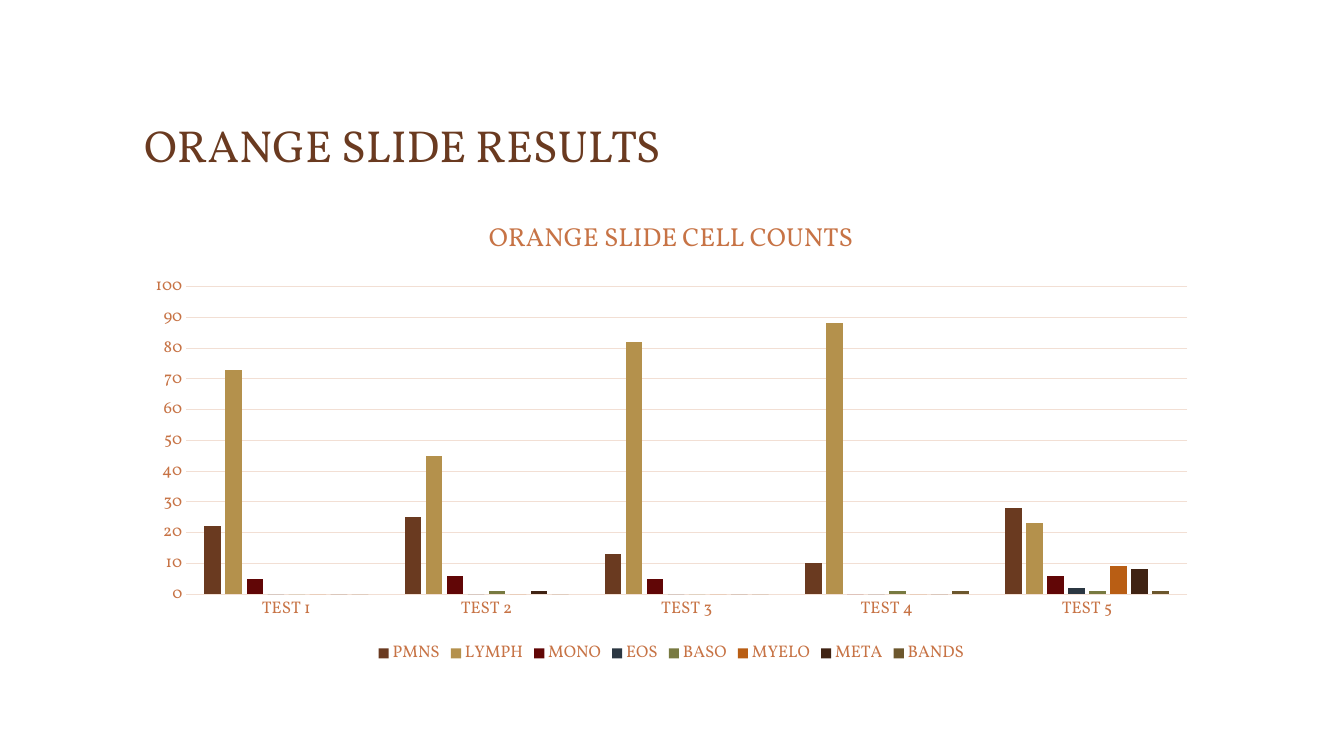
from pptx import Presentation, util as u
from pptx.chart import data as cd
from pptx.dml import color
from pptx.enum import chart as ch, text

FACE = "Vollkorn"
BROWN, RUST, PALE = "6A3A20", "C77345", "F2DFD4"
TESTS = [f"TEST {n}" for n in range(1, 6)]
CELLS = {
    "PMNS": ("6A3A20", (22, 25, 13, 10, 28)),
    "LYMPH": ("B4914C", (73, 45, 82, 88, 23)),
    "MONO": ("610606", (5, 6, 5, 0, 6)),
    "EOS": ("2B3742", (0, 0, 0, 0, 2)),
    "BASO": ("787A41", (0, 1, 0, 1, 1)),
    "MYELO": ("B95E14", (0, 0, 0, 0, 9)),
    "META": ("402313", (0, 1, 0, 0, 8)),
    "BANDS": ("6C572D", (0, 0, 0, 1, 1)),
}


def put(obj, **vals):
    for key, val in vals.items():
        setattr(obj, key, val)


def tint(fmt, code):
    fmt.rgb = color.RGBColor.from_string(code)


def style(font, size, code):
    put(font, name=FACE, size=u.Pt(size), bold=False)
    tint(font.color, code)


def rule(line):
    line.width = u.Pt(0.75)
    tint(line.color, PALE)


def heading(slide, words, box):
    title = slide.shapes.title
    put(title, **dict(zip(("left", "top", "width", "height"), box)))
    frame = title.text_frame
    put(frame, text=words, word_wrap=True, auto_size=text.MSO_AUTO_SIZE.NONE,
        vertical_anchor=text.MSO_ANCHOR.BOTTOM)
    para = frame.paragraphs[0]
    para.alignment = text.PP_ALIGN.LEFT
    style(para.runs[0].font, 32, BROWN)


def axes(chart):
    cat, val = chart.category_axis, chart.value_axis
    for axis in (cat, val):
        put(axis, major_tick_mark=ch.XL_TICK_MARK.NONE,
            minor_tick_mark=ch.XL_TICK_MARK.NONE)
        style(axis.tick_labels.font, 12, RUST)
    rule(cat.format.line)
    val.format.line.fill.background()
    put(val, minimum_scale=0, maximum_scale=100, major_unit=10)
    rule(val.major_gridlines.format.line)


def counts(slide, words, box):
    data = cd.CategoryChartData()
    data.categories = TESTS
    for name, (_, vals) in CELLS.items():
        data.add_series(name, vals)
    kind = ch.XL_CHART_TYPE.COLUMN_CLUSTERED
    chart = slide.shapes.add_chart(kind, *box, data).chart
    style(chart.font, 10, BROWN)

    put(chart, has_title=True, has_legend=True)
    frame = chart.chart_title.text_frame
    frame.text = words
    style(frame.paragraphs[0].runs[0].font, 18.6, RUST)
    put(chart.legend, position=ch.XL_LEGEND_POSITION.BOTTOM,
        include_in_layout=False)
    style(chart.legend.font, 12, RUST)

    axes(chart)
    plot = chart.plots[0]
    put(plot, gap_width=219, overlap=-27, vary_by_categories=False)
    for bars, (code, _) in zip(plot.series, CELLS.values()):
        bars.format.fill.solid()
        tint(bars.format.fill.fore_color, code)


def main():
    deck = Presentation()
    put(deck, slide_width=u.Cm(33.87), slide_height=u.Cm(19.05))
    slide = deck.slides.add_slide(deck.slide_layouts[5])
    left, width = u.Cm(3.38), u.Cm(27.08)
    heading(slide, "ORANGE SLIDE RESULTS",
            (left, u.Cm(1.19), width, u.Cm(3.25)))
    counts(slide, "ORANGE SLIDE CELL COUNTS",
           (left, u.Cm(5), width, u.Cm(11.86)))
    deck.save("out.pptx")


if __name__ == "__main__":
    main()
